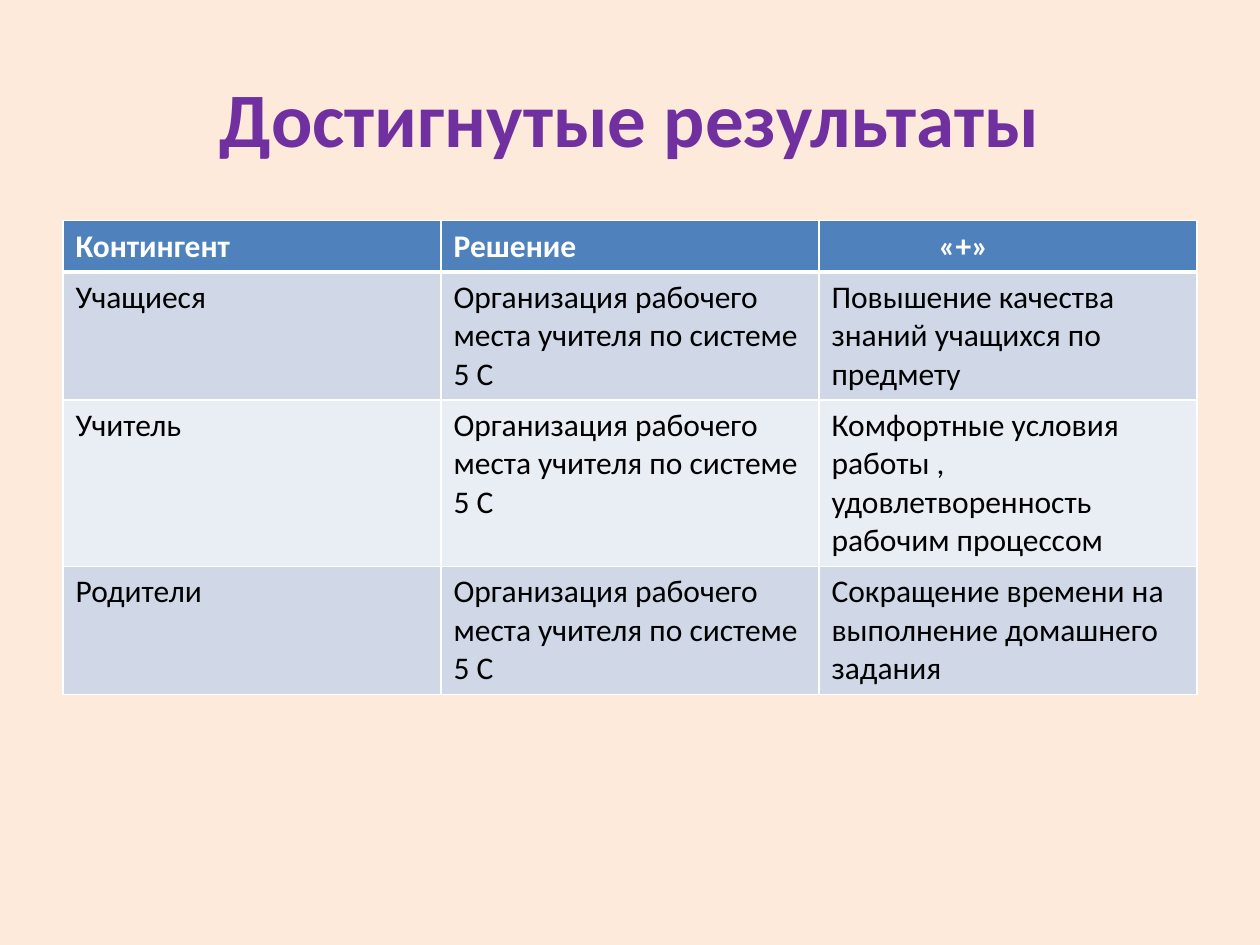
from dataclasses import dataclass

from lxml import etree
from pptx import Presentation
from pptx.dml.color import RGBColor
from pptx.enum.text import MSO_ANCHOR, PP_ALIGN
from pptx.oxml.ns import qn
from pptx.util import Cm, Pt

MIDDLE = MSO_ANCHOR.MIDDLE
CENTER = PP_ALIGN.CENTER
FONT = "Calibri"
COLORS = {
    "back": "FDEADA",
    "title": "7030A0",
    "head": "4F81BD",
    "odd": "D0D8E8",
    "even": "E9EDF4",
    "white": "FFFFFF",
    "black": "000000",
}
LEFT, WIDTH = Cm(1.27), Cm(22.86)
PLACE = "Организация рабочего места учителя по системе 5 С"


@dataclass
class Row:
    texts: tuple[str, str, str]
    height: float
    fill: str
    color: str = "black"
    bold: bool = False
    base: int = 1  # width of the bottom border in points


ROWS = [
    Row(("Контингент", "Решение", "«+»"), 1.03, "head", "white", True, 3),
    Row(("Учащиеся", PLACE, "Повышение качества знаний учащихся по предмету"),
        2.58, "odd"),
    Row(("Учитель", PLACE,
         "Комфортные условия работы , удовлетворенность рабочим процессом"),
        3.36, "even"),
    Row(("Родители", PLACE, "Сокращение времени на выполнение домашнего задания"),
        2.58, "odd"),
]


def rgb(name: str) -> RGBColor:
    return RGBColor.from_string(COLORS[name])


def style(par, size: int, color: str, bold: bool) -> None:
    for run in par.runs:
        font = run.font
        font.name, font.size, font.bold = FONT, Pt(size), bold
        font.color.rgb = rgb(color)


def edge(cell, top: int, base: int) -> None:
    """Draw white borders; they must stand before the fill in the XML."""
    props = cell._tc.get_or_add_tcPr()
    sides = {"lnL": 1, "lnR": 1, "lnT": top, "lnB": base}
    for spot, (side, width) in enumerate(sides.items()):
        line = etree.Element(qn(f"a:{side}"), w=str(Pt(width)))
        fill = etree.SubElement(line, qn("a:solidFill"))
        etree.SubElement(fill, qn("a:srgbClr"), val=COLORS["white"])
        props.insert(spot, line)


def draw_title(slide, text: str) -> None:
    title = slide.shapes.title
    title.left, title.top = LEFT, Cm(0.76)
    title.width, title.height = WIDTH, Cm(3.18)
    frame = title.text_frame
    frame.text = text
    frame.vertical_anchor = MIDDLE
    par = frame.paragraphs[0]
    par.alignment = CENTER
    style(par, 44, "title", True)


def draw_table(slide, rows: list[Row]) -> None:
    height = Cm(sum(row.height for row in rows))
    cols = len(rows[0].texts)
    table = slide.shapes.add_table(
        len(rows), cols, LEFT, Cm(4.45), WIDTH, height).table
    top = 1
    for r, row in enumerate(rows):
        table.rows[r].height = Cm(row.height)
        for c, text in enumerate(row.texts):
            cell = table.cell(r, c)
            cell.text_frame.text = text
            style(cell.text_frame.paragraphs[0], 18, row.color, row.bold)
            cell.fill.solid()
            cell.fill.fore_color.rgb = rgb(row.fill)
            edge(cell, top, row.base)
        top = row.base
    # Indent the heading of the last column
    last = table.cell(0, cols - 1).text_frame.paragraphs[0]
    last._p.get_or_add_pPr().set("marL", str(Cm(2.16)))


def main() -> None:
    deck = Presentation()
    deck.slide_width, deck.slide_height = Cm(25.4), Cm(19.05)
    slide = deck.slides.add_slide(deck.slide_layouts[5])

    # Background
    back = slide.background.fill
    back.solid()
    back.fore_color.rgb = rgb("back")

    # Content
    draw_title(slide, "Достигнутые результаты")
    draw_table(slide, ROWS)
    deck.save("out.pptx")


if __name__ == "__main__":
    main()
